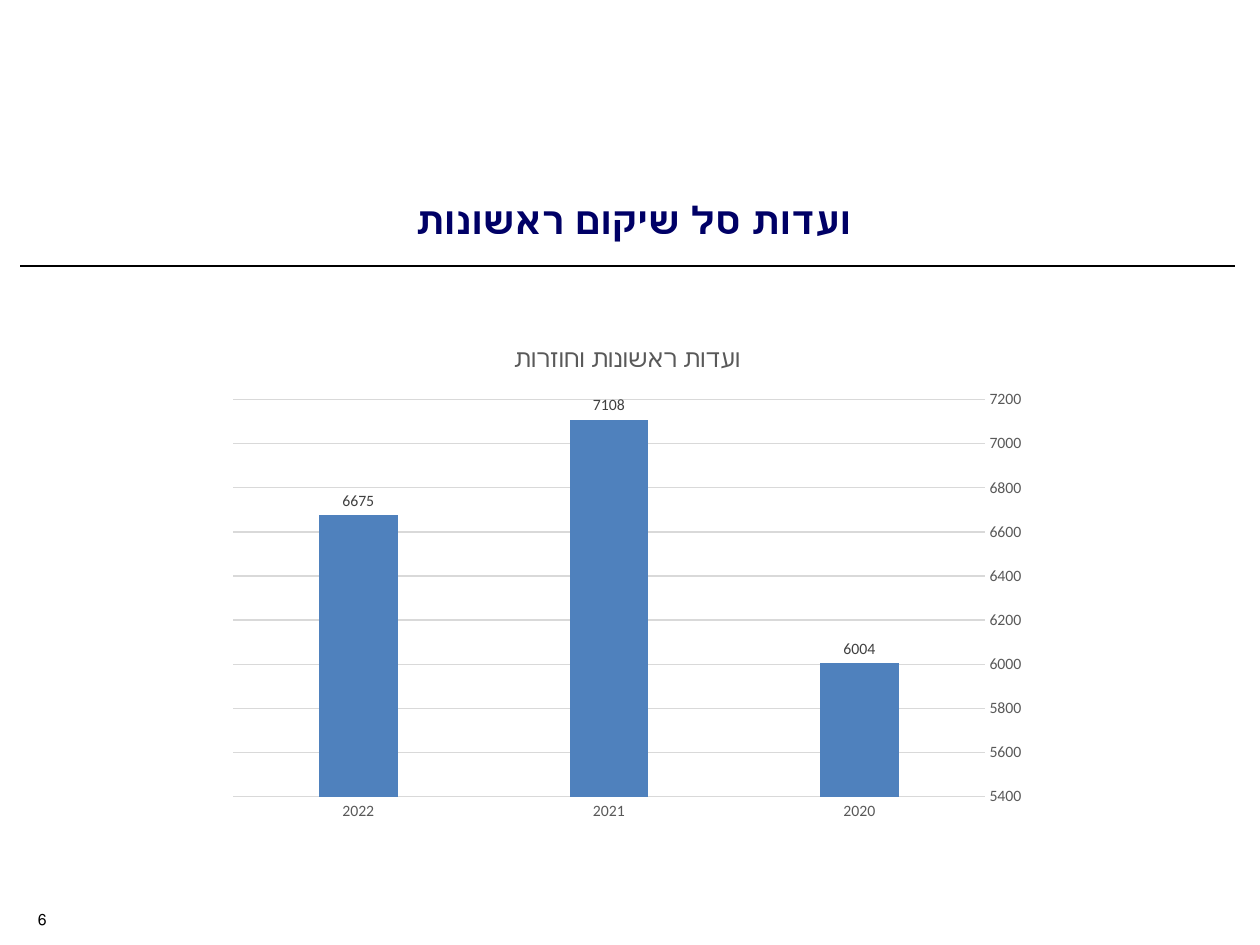
from pptx import Presentation
from pptx.chart.data import CategoryChartData
from pptx.dml.color import RGBColor
from pptx.enum.chart import XL_CHART_TYPE, XL_LABEL_POSITION, XL_TICK_MARK
from pptx.enum.shapes import MSO_CONNECTOR
from pptx.enum.text import MSO_ANCHOR, PP_ALIGN
from pptx.oxml.ns import qn
from pptx.util import Pt

COLUMNS = XL_CHART_TYPE.COLUMN_CLUSTERED
OUTSIDE = XL_LABEL_POSITION.OUTSIDE_END
NO_TICK = XL_TICK_MARK.NONE
STRAIGHT = MSO_CONNECTOR.STRAIGHT
CENTER, RIGHT = PP_ALIGN.CENTER, PP_ALIGN.RIGHT
TOP, MIDDLE = MSO_ANCHOR.TOP, MSO_ANCHOR.MIDDLE

BLACK = RGBColor(0x00, 0x00, 0x00)
NAVY = RGBColor(0x00, 0x00, 0x66)
BLUE = RGBColor(0x4F, 0x81, 0xBD)
DARK_GRAY = RGBColor(0x40, 0x40, 0x40)
GRAY = RGBColor(0x59, 0x59, 0x59)
LIGHT_GRAY = RGBColor(0xD9, 0xD9, 0xD9)
FONT = "Calibri"

TITLE = "ועדות סל שיקום ראשונות "
PAGE_NUMBER = "6"
CHART_TITLE = "ועדות ראשונות וחוזרות"
COMMITTEES = {"2020": 6004, "2021": 7108, "2022": 6675}


def style(font, size, color, bold=False):
    font.name = FONT
    font.size = Pt(size)
    font.bold = bold
    font.color.rgb = color


def set_rtl(para):
    para._p.get_or_add_pPr().set("rtl", "1")


def add_text(page, text, area, align, anchor, size, color, bold=False):
    frame = page.shapes.add_textbox(*map(Pt, area)).text_frame
    frame.word_wrap = True
    frame.vertical_anchor = anchor
    para = frame.paragraphs[0]
    para.text = text
    para.alignment = align
    set_rtl(para)
    style(para.font, size, color, bold)


def add_rule(page, left, right, y):
    rule = page.shapes.add_connector(STRAIGHT, Pt(right), Pt(y), Pt(left), Pt(y))
    rule.line.color.rgb = BLACK
    rule.line.width = Pt(0.75)
    properties = rule._element.spPr
    properties.append(properties.makeelement(qn("a:effectLst"), {}))


def add_committee_chart(page, area):
    data = CategoryChartData()
    data.categories = list(COMMITTEES)
    data.add_series("Series 1", list(COMMITTEES.values()))
    chart = page.shapes.add_chart(COLUMNS, *map(Pt, area), data).chart
    style(chart.font, 10, BLACK)
    chart.has_legend = False

    chart.has_title = True
    chart.chart_title.include_in_layout = False
    para = chart.chart_title.text_frame.paragraphs[0]
    para.text = CHART_TITLE
    set_rtl(para)
    style(para.font, 14, GRAY)

    years, counts = chart.category_axis, chart.value_axis
    for axis in (years, counts):
        axis.major_tick_mark = axis.minor_tick_mark = NO_TICK
        style(axis.tick_labels.font, 9, GRAY)
    years.reverse_order = True
    counts.minimum_scale, counts.maximum_scale = 5400, 7200
    counts.major_unit = 200
    counts.format.line.fill.background()
    for line in (years.format.line, counts.major_gridlines.format.line):
        line.color.rgb = LIGHT_GRAY
        line.width = Pt(0.75)

    plot = chart.plots[0]
    plot.gap_width, plot.overlap = 219, -27
    plot.vary_by_categories = False
    bars = plot.series[0]
    bars.format.fill.solid()
    bars.format.fill.fore_color.rgb = BLUE
    labels = bars.data_labels
    labels.show_value = True
    labels.position = OUTSIDE
    style(labels.font, 9, DARK_GRAY)


def main():
    deck = Presentation()
    deck.slide_width, deck.slide_height = Pt(720), Pt(540)
    page = deck.slides.add_slide(deck.slide_layouts[6])
    add_rule(page, 11.5, 705.6, 152)
    add_text(page, PAGE_NUMBER, (5.8, 516.2, 28, 18), RIGHT, TOP, 9, BLACK)
    add_text(page, TITLE, (17.3, 108, 683.3, 34.6), CENTER, MIDDLE, 21.6, NAVY, bold=True)
    add_committee_chart(page, (123.8, 185, 469.4, 289.4))
    deck.save("out.pptx")


if __name__ == "__main__":
    main()
